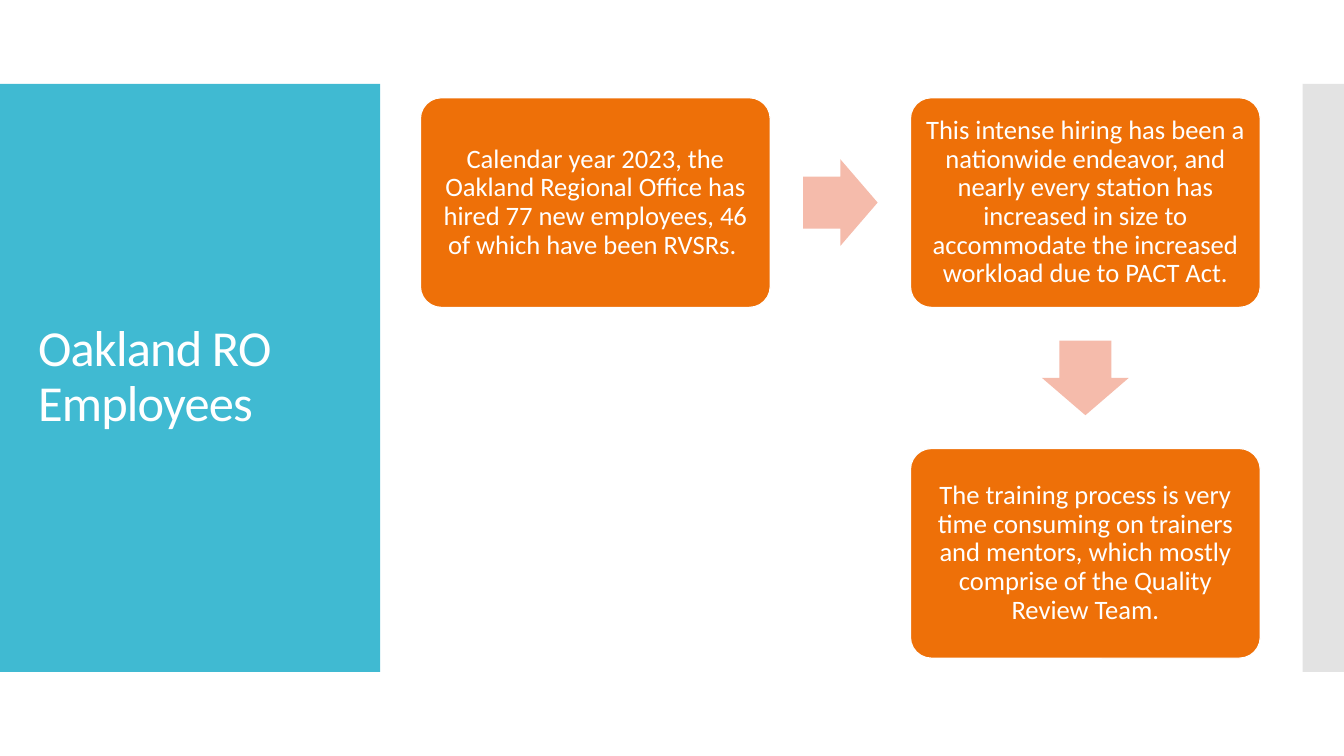
from pptx import Presentation
from pptx.dml.color import RGBColor
from pptx.enum.shapes import MSO_SHAPE
from pptx.enum.text import MSO_ANCHOR, PP_ALIGN
from pptx.util import Inches, Pt

RECTANGLE = MSO_SHAPE.RECTANGLE
ROUNDED = MSO_SHAPE.ROUNDED_RECTANGLE
ARROW = MSO_SHAPE.RIGHT_ARROW
MIDDLE = MSO_ANCHOR.MIDDLE
LEFT, CENTER = PP_ALIGN.LEFT, PP_ALIGN.CENTER

COLORS = {
    "band": "40BAD2",
    "edge": "E3E3E3",
    "step": "EE7008",
    "arrow": "F5BBAB",
    "white": "FFFFFF",
}
STEPS = [
    (0, 0, "Calendar year 2023, the Oakland Regional Office has hired 77 new employees, "
           "46 of which have been RVSRs. "),
    (1, 0, "This intense hiring has been a nationwide endeavor, and nearly every station "
           "has increased in size to accommodate the increased workload due to PACT Act."),
    (1, 1, "The training process is very time consuming on trainers and mentors, which "
           "mostly comprise of the Quality Review Team."),
]


def color(name):
    return RGBColor.from_string(COLORS[name])


def apply_format(target, values):
    for name, value in values.items():
        setattr(target, name, value)


class ProcessSlide:
    font_name = "Calibri"
    grid_left, grid_top = 31.28, 12.93
    column_pitch, row_pitch = 36.46, 46.4
    step_width, step_height = 26.03, 27.73
    arrow_width, arrow_height = 5.55, 11.47
    step_inset = Inches(0.08)

    def __init__(self, presentation):
        self.width = presentation.slide_width
        self.height = presentation.slide_height
        self.slide = presentation.slides.add_slide(presentation.slide_layouts[6])

    def percent(self, left, top, width, height):
        return (
            int(self.width * left / 100),
            int(self.height * top / 100),
            int(self.width * width / 100),
            int(self.height * height / 100),
        )

    def cell(self, column, row):
        return (
            self.grid_left + column * self.column_pitch,
            self.grid_top + row * self.row_pitch,
        )

    def shape(self, kind, fill, box, adjustments=()):
        shape = self.slide.shapes.add_shape(kind, *self.percent(*box))
        shape.shadow.inherit = False
        shape.fill.solid()
        shape.fill.fore_color.rgb = color(fill)
        shape.line.fill.background()
        for index, value in enumerate(adjustments):
            shape.adjustments[index] = value
        return shape

    def add_text(self, shape, text, size, alignment):
        frame = shape.text_frame
        apply_format(frame, {"word_wrap": True, "vertical_anchor": MIDDLE})
        paragraph = frame.paragraphs[0]
        apply_format(paragraph, {"alignment": alignment, "line_spacing": 0.9})
        run = paragraph.add_run()
        run.text = text
        apply_format(run.font, {"name": self.font_name, "size": Pt(size)})
        run.font.color.rgb = color("white")
        return run

    def title(self, text, box):
        shape = self.slide.shapes.add_textbox(*self.percent(*box))
        run = self.add_text(shape, text, 36, LEFT)
        run.font._element.set("spc", "-60")

    def step(self, column, row, text):
        box = (*self.cell(column, row), self.step_width, self.step_height)
        shape = self.shape(ROUNDED, "step", box, [0.1])
        shape.line.color.rgb = color("white")
        shape.line.width = Pt(0.85)
        sides = ("left", "right", "top", "bottom")
        apply_format(shape.text_frame, {f"margin_{side}": self.step_inset for side in sides})
        self.add_text(shape, text, 19, CENTER)

    def arrow(self, start, end):
        left, top = self.cell((start[0] + end[0]) / 2, (start[1] + end[1]) / 2)
        left += (self.step_width - self.arrow_width) / 2
        top += (self.step_height - self.arrow_height) / 2
        box = (left, top, self.arrow_width, self.arrow_height)
        shape = self.shape(ARROW, "arrow", box, [0.6, 0.5])
        shape.rotation = 90 if start[0] == end[0] else 0


def main():
    presentation = Presentation()
    presentation.slide_width = Inches(13.33)
    presentation.slide_height = Inches(7.5)

    page = ProcessSlide(presentation)
    page.shape(RECTANGLE, "band", (0, 11.11, 28.28, 77.78))
    page.shape(RECTANGLE, "edge", (96.92, 11.11, 3.08, 77.78))
    page.title("Oakland RO Employees", (2.1, 16.4, 24.16, 67.07))
    for column, row, text in STEPS:
        page.step(column, row, text)
    for start, end in zip(STEPS, STEPS[1:]):
        page.arrow(start[:2], end[:2])

    presentation.save("out.pptx")


if __name__ == "__main__":
    main()
